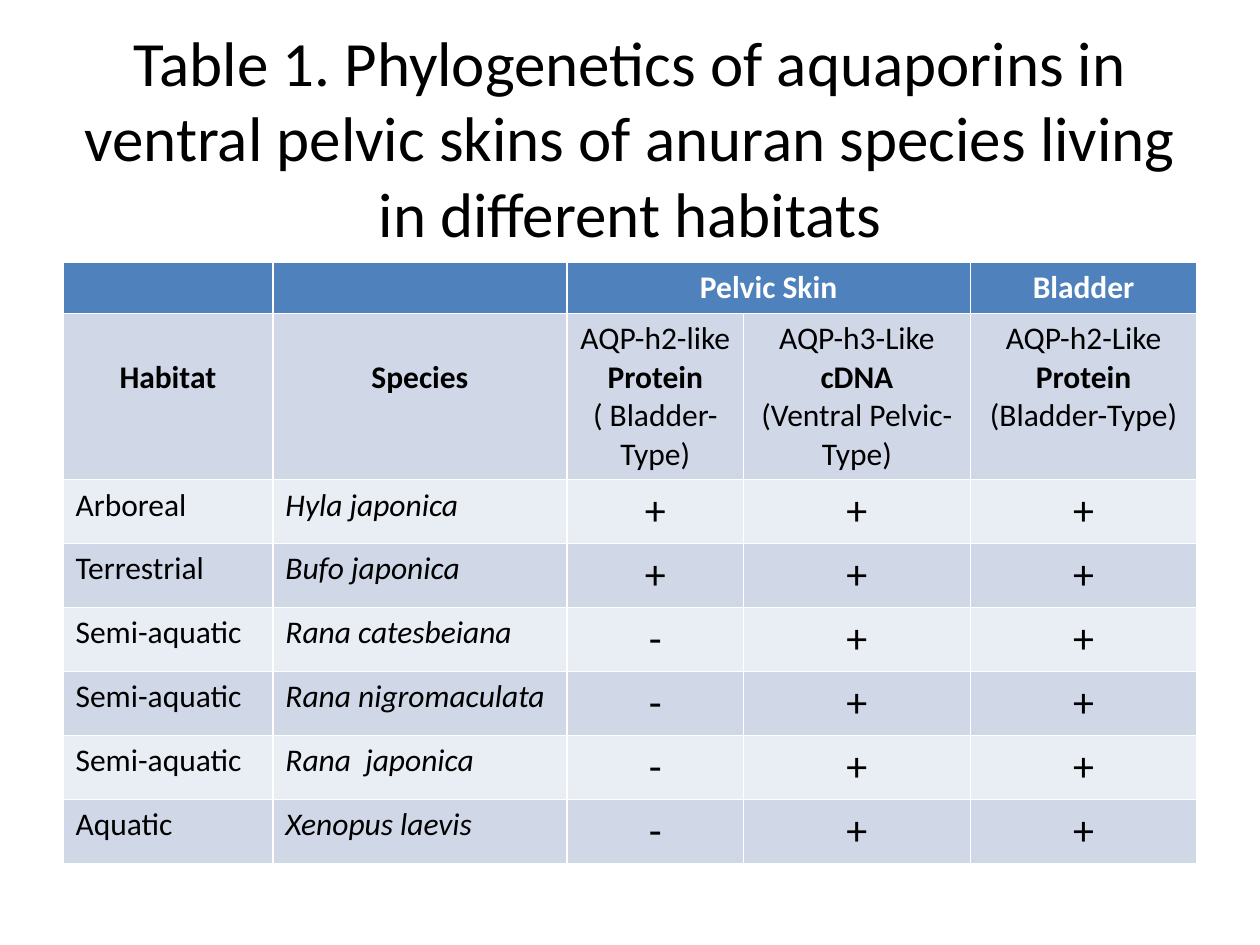
from pptx import Presentation as Deck
from pptx.dml.color import RGBColor as RGB
from pptx.enum.text import MSO_ANCHOR as Anchor, PP_ALIGN as Align
from pptx.util import Cm, Pt

BLACK = RGB(0x00, 0x00, 0x00)
WHITE = RGB(0xFF, 0xFF, 0xFF)
BLUE = RGB(0x4F, 0x81, 0xBD)
BANDS = RGB(0xD0, 0xD8, 0xE8), RGB(0xE9, 0xED, 0xF4)

TITLE = ("Table 1. Phylogenetics of aquaporins in ventral pelvic skins "
         "of anuran species living in different habitats")
WIDTHS = 4.23, 5.93, 3.56, 4.57, 4.57
HEIGHTS = [1.03, 3.35] + [1.29] * 6
GROUPS = "", "", "Pelvic Skin", "", "Bladder"
NAMES = "Habitat", "Species"
TYPES = [
    [[("AQP-h2-like", False)], [("Protein", True)], [("( Bladder-Type)", False)]],
    [[("AQP-h3-Like ", False), ("cDNA", True)], [("(Ventral Pelvic-Type)", False)]],
    [[("AQP-h2-Like ", False), ("Protein", True)], [("(Bladder-Type)", False)]],
]
FROGS = [
    ("Arboreal", "Hyla japonica", "+++"),
    ("Terrestrial", "Bufo japonica", "+++"),
    ("Semi-aquatic", "Rana catesbeiana", "-++"),
    ("Semi-aquatic", "Rana nigromaculata", "-++"),
    ("Semi-aquatic", "Rana  japonica", "-++"),
    ("Aquatic", "Xenopus laevis", "-++"),
]


class Page:
    def __init__(self, slide, face="Calibri", size=18):
        self.slide, self.face, self.size = slide, face, size

    def text(self, frame, paras, align=Align.CENTER, color=BLACK, **style):
        for i, runs in enumerate(paras):
            para = frame.add_paragraph() if i else frame.paragraphs[0]
            para.alignment = align
            for words, bold in runs:
                run = para.add_run()
                run.text = words
                run.font.color.rgb = color
                look = {"name": self.face, "size": Pt(self.size), "bold": bold}
                for key, value in (look | style).items():
                    setattr(run.font, key, value)

    def title(self, words, box, size):
        frame = self.slide.shapes.add_textbox(*map(Cm, box)).text_frame
        frame.word_wrap = True
        frame.vertical_anchor = Anchor.MIDDLE
        self.text(frame, [[(words, False)]], size=Pt(size))

    def table(self, left, top, widths, heights):
        grid = self.slide.shapes.add_table(
            len(heights), len(widths), Cm(left), Cm(top),
            Cm(sum(widths)), Cm(sum(heights))).table
        for col, width in zip(grid.columns, widths):
            col.width = Cm(width)
        for row, height in zip(grid.rows, heights):
            row.height = Cm(height)
        return grid

    def cell(self, cell, fill, paras, **style):
        cell.fill.solid()
        cell.fill.fore_color.rgb = fill
        self.text(cell.text_frame, paras, **style)


def main():
    deck = Deck()
    deck.slide_width, deck.slide_height = Cm(25.4), Cm(19.05)
    page = Page(deck.slides.add_slide(deck.slide_layouts[6]))
    page.title(TITLE, (1.27, 0.43, 22.86, 4.65), 36)

    grid = page.table(1.27, 5.29, WIDTHS, HEIGHTS)
    for c, name in enumerate(GROUPS):
        paras = [[(name, True)]] if name else []
        page.cell(grid.cell(0, c), BLUE, paras, color=WHITE)
    grid.cell(0, 2).merge(grid.cell(0, 3))

    for c, name in enumerate(NAMES):
        cell = grid.cell(1, c)
        cell.margin_top = Cm(0.9)
        page.cell(cell, BANDS[0], [[(name, True)]])
    for c, paras in enumerate(TYPES, 2):
        page.cell(grid.cell(1, c), BANDS[0], paras)

    for r, (home, frog, signs) in enumerate(FROGS, 2):
        fill = BANDS[(r + 1) % 2]
        for c, words in enumerate((home, frog, *signs)):
            style = {"size": Pt(24)} if c > 1 else {"align": Align.LEFT, "italic": c == 1}
            page.cell(grid.cell(r, c), fill, [[(words, False)]], **style)

    deck.save("out.pptx")


if __name__ == "__main__":
    main()
